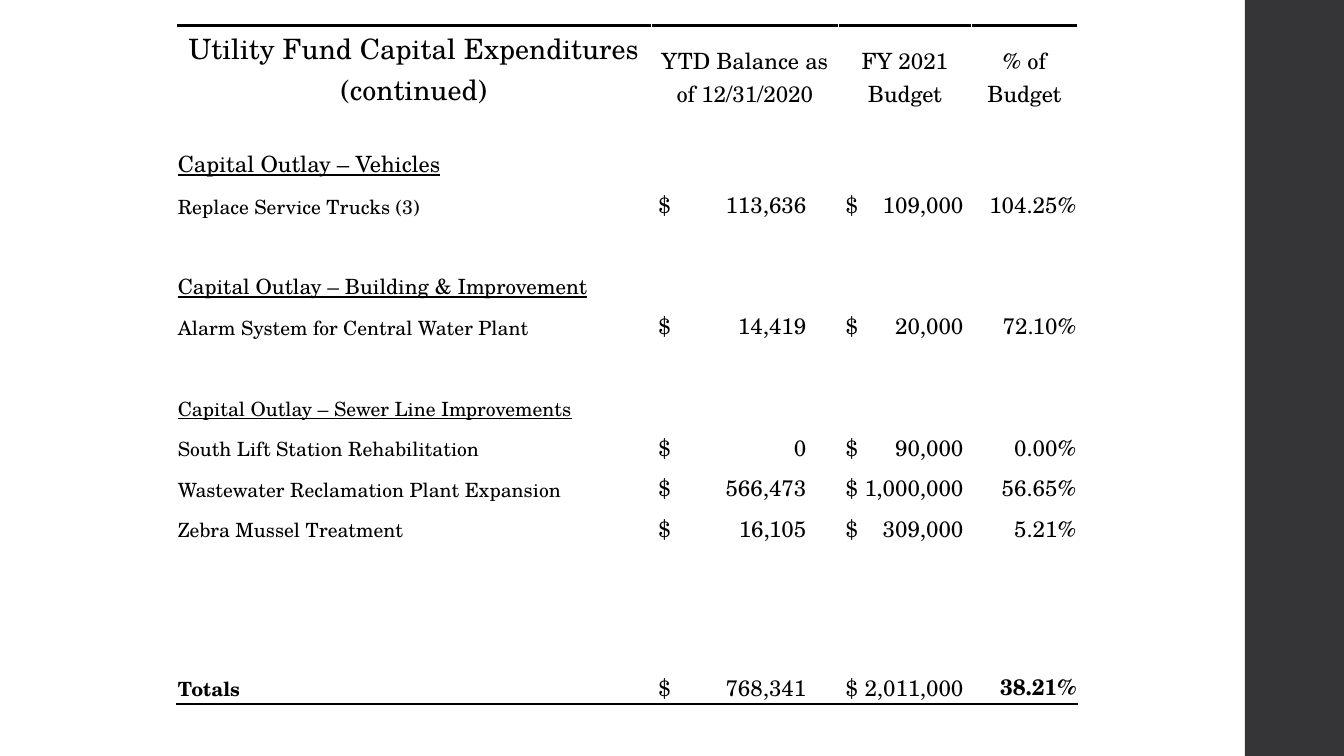
"""Build the utility fund capital expenditures slide."""
from lxml import etree
from pptx import Presentation
from pptx.dml.color import RGBColor
from pptx.enum.shapes import MSO_SHAPE
from pptx.enum.text import MSO_ANCHOR, PP_ALIGN
from pptx.oxml.ns import qn
from pptx.util import Cm, Pt

RECTANGLE = MSO_SHAPE.RECTANGLE
BOTTOM = MSO_ANCHOR.BOTTOM
LEFT, CENTER, RIGHT = PP_ALIGN.LEFT, PP_ALIGN.CENTER, PP_ALIGN.RIGHT
FONT = "TeX Gyre Schola"
BLACK, WHITE, CHARCOAL = "000000", "FFFFFF", "353537"

COLUMN_WIDTHS = [11.96, 4.72, 3.35, 2.67]
AMOUNT_TABS = {1: 3.73, 2: 2.97}
BLANK = ("", "", "", "")
ROWS = [
    (2.13, 20, ("Utility Fund Capital Expenditures (continued)",
                "YTD Balance as of 12/31/2020", "FY 2021 Budget", "% of Budget")),
    (0.75, 10, BLANK),
    (1.02, 16, ("Capital Outlay – Vehicles", "", "", "")),
    (1.02, 14, ("Replace Service Trucks (3)", "113,636", "109,000", "104.25%")),
    (1.02, 10, BLANK),
    (1.02, 15, ("Capital Outlay – Building & Improvement", "", "", "")),
    (1.02, 14, ("Alarm System for Central Water Plant", "14,419", "20,000", "72.10%")),
    (1.02, 10, BLANK),
    (1.02, 14, ("Capital Outlay – Sewer Line Improvements", "", "", "")),
    (1.02, 14, ("South Lift Station Rehabilitation", "0", "90,000", "0.00%")),
    (1.02, 14, ("Wastewater Reclamation Plant Expansion", "566,473", "1,000,000", "56.65%")),
    (1.02, 14, ("Zebra Mussel Treatment", "16,105", "309,000", "5.21%")),
    (1.02, 10, BLANK),
    (0.71, 10, BLANK),
    (1.02, 10, BLANK),
    (1.27, 14, ("Totals", "768,341", "2,011,000", "38.21%")),
]
LAST = len(ROWS) - 1


def color(value):
    return RGBColor.from_string(value)


def add_border(cell, side):
    line = etree.SubElement(cell._tc.get_or_add_tcPr(), qn(side), w=str(Pt(2)))
    fill = etree.SubElement(line, qn("a:solidFill"))
    etree.SubElement(fill, qn("a:srgbClr"), val=BLACK)


deck = Presentation()
deck.slide_width, deck.slide_height = Cm(33.87), Cm(19.05)
page = deck.slides.add_slide(deck.slide_layouts[6])

side_band = page.shapes.add_shape(RECTANGLE, Cm(31.37), 0, Cm(2.5), deck.slide_height)
side_band.shadow.inherit = False
side_band.fill.solid()
side_band.fill.fore_color.rgb = color(CHARCOAL)
side_band.line.fill.background()

table = page.shapes.add_table(
    len(ROWS), len(COLUMN_WIDTHS), Cm(4.45), Cm(0.64),
    Cm(sum(COLUMN_WIDTHS)), Cm(sum(row[0] for row in ROWS))).table
table.first_row = table.horz_banding = False
for column, width in zip(table.columns, COLUMN_WIDTHS):
    column.width = Cm(width)

for row_index, (height, label_size, texts) in enumerate(ROWS):
    table.rows[row_index].height = Cm(height)
    for column_index, text in enumerate(texts):
        cell = table.cell(row_index, column_index)
        is_amount = row_index > 0 and column_index in AMOUNT_TABS
        layout = {"vertical_anchor": BOTTOM, "margin_top": Cm(0.03), "margin_bottom": 0,
                  "margin_left": Cm(0.18 if is_amount else 0.03), "margin_right": Cm(0.03)}
        for name, value in layout.items():
            setattr(cell, name, value)
        if row_index == 0:
            add_border(cell, "a:lnT")
        if row_index == LAST:
            add_border(cell, "a:lnB")
        cell.fill.solid()
        cell.fill.fore_color.rgb = color(WHITE)

        para = cell.text_frame.paragraphs[0]
        if not text:
            etree.SubElement(para._p, qn("a:endParaRPr"), sz="1000")
            continue
        para.alignment = CENTER if row_index == 0 else RIGHT if column_index == 3 else LEFT
        if is_amount:
            tabs = etree.SubElement(para._p.get_or_add_pPr(), qn("a:tabLst"))
            etree.SubElement(tabs, qn("a:tab"), pos=str(Cm(AMOUNT_TABS[column_index])), algn="r")
        span = para.add_run()
        span.text = f"$\t{text}" if is_amount else text
        style = {"name": FONT, "size": Pt(label_size if column_index == 0 else 16),
                 "bold": row_index == LAST and column_index in (0, 3),
                 "underline": text.startswith("Capital Outlay")}
        for name, value in style.items():
            setattr(span.font, name, value)
        span.font.color.rgb = color(BLACK)

deck.save("out.pptx")
